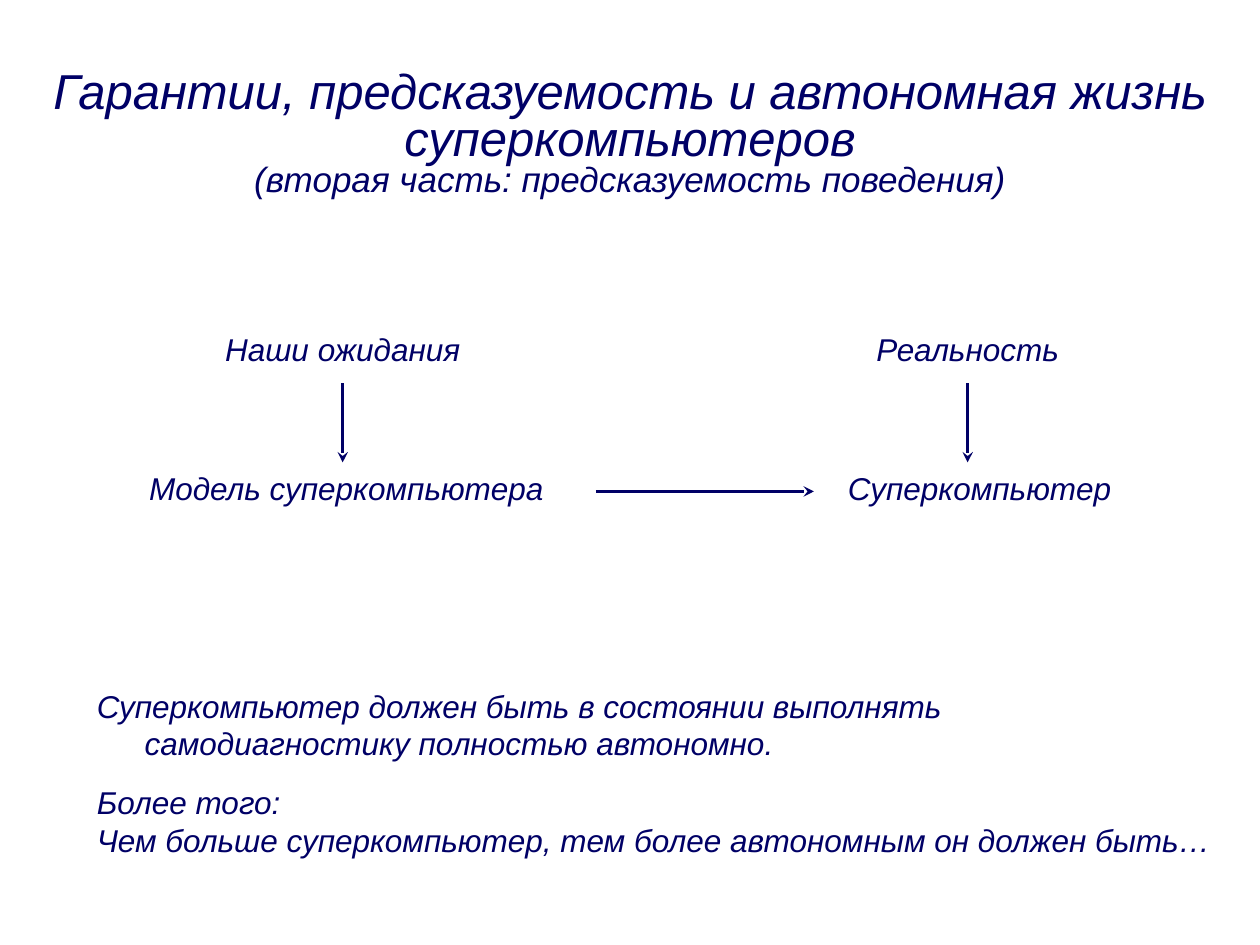
from collections import namedtuple

import pptx
import pptx.dml.color
import pptx.enum.shapes
import pptx.enum.text
import pptx.oxml.ns
import pptx.oxml.xmlchemy
import pptx.util

COLORS = {"background": "FFFFFF", "ink": "000066"}
FONT = "Arial"
COLUMNS, ROWS = 100, 75
CELL = pptx.util.Inches(0.1)
LABEL_HEIGHT = 4
Box = namedtuple("Box", "left top width height")


def cells(*counts):
    return [round(count * CELL) for count in counts]


def rgb(name):
    return pptx.dml.color.RGBColor.from_string(COLORS[name])


def add_text(paragraph, text, size):
    run = paragraph.add_run()
    run.text = text
    run.font.name = FONT
    run.font.size = pptx.util.Pt(size)
    run.font.italic = True
    run.font.color.rgb = rgb("ink")


def add_arrow(slide, start, end):
    arrow = slide.shapes.add_connector(
        pptx.enum.shapes.MSO_CONNECTOR.STRAIGHT, *cells(*start, *end)
    )
    arrow.line.color.rgb = rgb("ink")
    arrow.line.width = pptx.util.Pt(2)
    head = pptx.oxml.xmlchemy.OxmlElement("a:tailEnd")
    head.set("type", "stealth")
    properties = arrow._element.find(pptx.oxml.ns.qn("p:spPr"))
    properties.find(pptx.oxml.ns.qn("a:ln")).append(head)
    properties.append(pptx.oxml.xmlchemy.OxmlElement("a:effectLst"))


def add_label(slide, text, center, top, width):
    label = slide.shapes.add_textbox(
        *cells(center - width / 2, top, width, LABEL_HEIGHT)
    )
    label.text_frame.word_wrap = False
    paragraph = label.text_frame.paragraphs[0]
    paragraph.alignment = pptx.enum.text.PP_ALIGN.CENTER
    add_text(paragraph, text, 18)


def place_title(slide, box):
    title = slide.shapes.title
    title.left, title.top, title.width, title.height = cells(*box)
    frame = title.text_frame
    frame.word_wrap = True
    frame.auto_size = pptx.enum.text.MSO_AUTO_SIZE.NONE
    frame.vertical_anchor = pptx.enum.text.MSO_ANCHOR.TOP
    heading, subtitle = frame.paragraphs[0], frame.add_paragraph()
    for paragraph, text, size in (
        (heading, "Гарантии, предсказуемость и автономная жизнь суперкомпьютеров", 28),
        (subtitle, "(вторая часть: предсказуемость поведения)", 20),
    ):
        paragraph.alignment = pptx.enum.text.PP_ALIGN.CENTER
        paragraph.line_spacing = 0.8
        add_text(paragraph, text, size)


def place_diagram(slide, box):
    lower_top = box.top + box.height - LABEL_HEIGHT
    branches = (
        (16.5, "Наши ожидания", 20.9, 16.8, "Модель суперкомпьютера", 33.6),
        (66.1, "Реальность", 16.7, 67.05, "Суперкомпьютер", 23.1),
    )
    for offset, source, source_width, target_offset, target, target_width in branches:
        center = box.left + offset
        add_label(slide, source, center, box.top, source_width)
        add_label(slide, target, box.left + target_offset, lower_top, target_width)
        add_arrow(slide, (center, box.top + 4.7), (center, lower_top))
    level = lower_top + 2.3
    add_arrow(slide, (box.left + 36.6, level), (box.left + 53.9, level))


def place_conclusions(slide, box):
    conclusions = slide.shapes.add_textbox(*cells(*box))
    frame = conclusions.text_frame
    frame.word_wrap = True
    statements = (
        ("Суперкомпьютер должен быть в состоянии выполнять "
         "самодиагностику полностью автономно.", 0),
        ("Более того:", 12),
        ("Чем больше суперкомпьютер, тем более автономным он должен быть…", 0),
    )
    indent = pptx.util.Inches(0.38)
    for index, (text, gap) in enumerate(statements):
        paragraph = frame.add_paragraph() if index else frame.paragraphs[0]
        paragraph.space_before = pptx.util.Pt(gap)
        properties = paragraph._p.get_or_add_pPr()
        properties.set("marL", str(indent))
        properties.set("indent", str(-indent))
        add_text(paragraph, text, 18)


def main():
    presentation = pptx.Presentation()
    presentation.slide_width, presentation.slide_height = cells(COLUMNS, ROWS)
    slide = presentation.slides.add_slide(presentation.slide_layouts[5])
    slide.background.fill.solid()
    slide.background.fill.fore_color.rgb = rgb("background")
    place_conclusions(slide, Box(6.7, 54, 90.6, 14.8))
    place_diagram(slide, Box(10.7, 25.7, 78.6, 15))
    place_title(slide, Box(0, 5.2, COLUMNS, 11.2))
    presentation.save("out.pptx")


if __name__ == "__main__":
    main()
